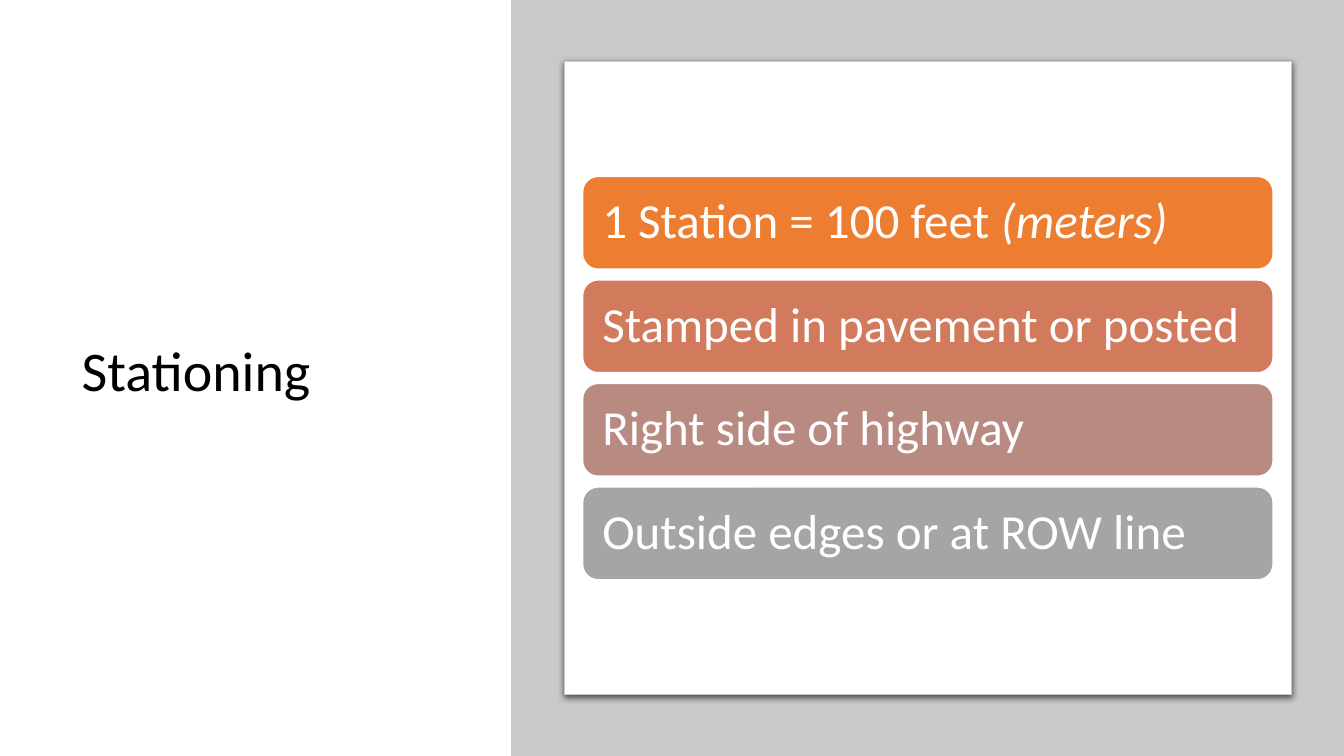
"""Build the Stationing slide: a title beside a panel of four coloured bars."""
from lxml import etree
from pptx import Presentation
from pptx import util as u
from pptx.dml.color import RGBColor
from pptx.enum import shapes, text
from pptx.oxml.ns import qn

THEME = {
    "font": "Calibri", "title_size": 40, "bar_size": 35,
    "black": "000000", "white": "FFFFFF", "backdrop": "C8CACA",
    "bars": ["ED7D31", "D17B5C", "B98A82", "A5A5A5"],
}
BAR_TEXTS = [
    [("1 Station = 100 feet ", False), ("(meters)", True)],
    [("Stamped in pavement or posted", False)],
    [("Right side of highway", False)],
    [("Outside edges or at ROW line", False)],
]
BAR_LEFT, BAR_TOP, BAR_WIDTH, BAR_HEIGHT, BAR_PITCH = 5.78, 1.75, 6.85, 0.92, 1.027


def add_block(kind, box, fill, line=None, line_width=1):
    shape = slide.shapes.add_shape(kind, *[u.Inches(length) for length in box])
    shape.shadow.inherit = False
    shape.fill.solid()
    shape.fill.fore_color.rgb = RGBColor.from_string(fill)
    if line:
        shape.line.color.rgb = RGBColor.from_string(line)
        shape.line.width = u.Pt(line_width)
    else:
        shape.line.fill.background()
    return shape


def format_text(frame, size, color):
    frame.word_wrap = True
    frame.auto_size = text.MSO_AUTO_SIZE.NONE
    frame.vertical_anchor = text.MSO_ANCHOR.MIDDLE
    paragraph = frame.paragraphs[0]
    paragraph.alignment = text.PP_ALIGN.LEFT
    paragraph.line_spacing = 0.9
    for run in paragraph.runs:
        run.font.name = THEME["font"]
        run.font.size = u.Pt(size)
        run.font.color.rgb = RGBColor.from_string(color)


presentation = Presentation()
presentation.slide_width, presentation.slide_height = u.Inches(13.333), u.Inches(7.5)
slide = presentation.slides.add_slide(presentation.slide_layouts[5])

title = slide.shapes.title
title.left, title.top = u.Inches(0.71), u.Inches(0.69)
title.width, title.height = u.Inches(4.01), u.Inches(6.02)
title.text_frame.text = "Stationing"
format_text(title.text_frame, THEME["title_size"], THEME["black"])

rectangle = shapes.MSO_SHAPE.RECTANGLE
rounded = shapes.MSO_SHAPE.ROUNDED_RECTANGLE
add_block(rectangle, (5.07, 0, 8.263, 7.5), THEME["backdrop"])

panel = add_block(rectangle, (5.6, 0.61, 7.21, 6.28), THEME["white"], THEME["backdrop"], 0.75)
effects = panel._element.spPr.find(qn("a:effectLst"))
shadow = etree.SubElement(effects, qn("a:outerShdw"), blurRad=str(u.Pt(4.5)),
                          dist=str(u.Pt(1.5)), dir="5400000", algn="ctr", rotWithShape="0")
shadow_color = etree.SubElement(shadow, qn("a:srgbClr"), val=THEME["black"])
etree.SubElement(shadow_color, qn("a:alpha"), val="63000")

for row, (pieces, color) in enumerate(zip(BAR_TEXTS, THEME["bars"])):
    box = (BAR_LEFT, BAR_TOP + row * BAR_PITCH, BAR_WIDTH, BAR_HEIGHT)
    bar = add_block(rounded, box, color, THEME["white"])
    frame = bar.text_frame
    frame.margin_left = frame.margin_right = u.Inches(0.15)
    frame.margin_top = frame.margin_bottom = u.Inches(0.15)
    for wording, italic in pieces:
        run = frame.paragraphs[0].add_run()
        run.text = wording
        run.font.italic = italic
    format_text(frame, THEME["bar_size"], THEME["white"])

presentation.save("out.pptx")
